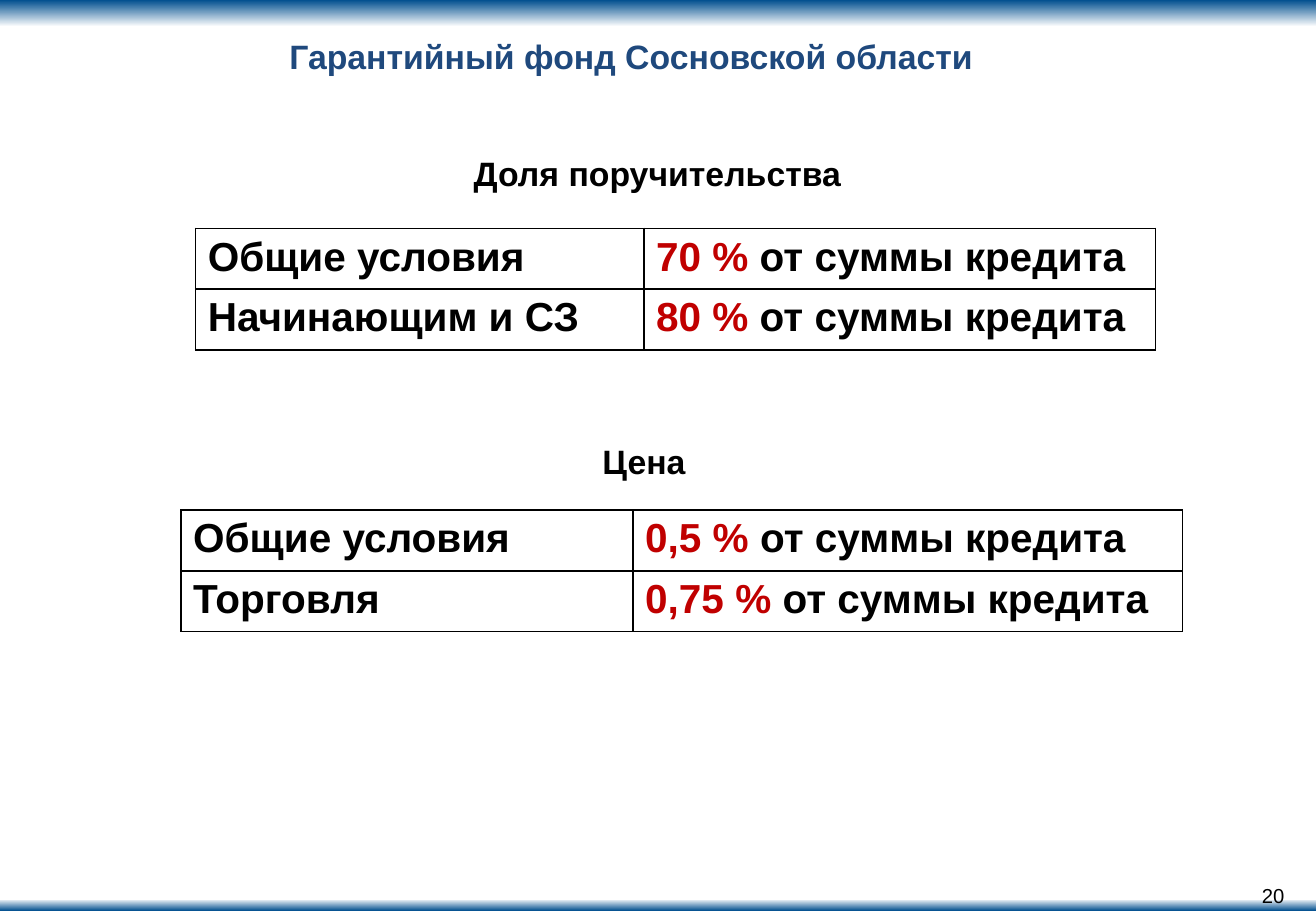
from dataclasses import dataclass

from lxml import etree
from pptx import Presentation
from pptx.dml.color import RGBColor
from pptx.enum.shapes import MSO_SHAPE
from pptx.enum.text import MSO_ANCHOR, PP_ALIGN
from pptx.oxml.ns import qn
from pptx.util import Inches, Pt

RECTANGLE = MSO_SHAPE.RECTANGLE
TOP, MIDDLE = MSO_ANCHOR.TOP, MSO_ANCHOR.MIDDLE
LEFT, CENTER, RIGHT = PP_ALIGN.LEFT, PP_ALIGN.CENTER, PP_ALIGN.RIGHT

BLACK = RGBColor(0x00, 0x00, 0x00)
WHITE = RGBColor(0xFF, 0xFF, 0xFF)
BAND_BLUE = RGBColor(0x00, 0x4E, 0x8E)
TITLE_BLUE = RGBColor(0x1F, 0x49, 0x7D)
RATE_RED = RGBColor(0xC0, 0x00, 0x00)

FONT = "Arial"
PAGE_WIDTH, PAGE_HEIGHT = 10.83, 7.5
ROW_HEIGHT = 0.5
RATE_BASE = " от суммы кредита"


@dataclass
class Band:
    top: float
    height: float
    angle: int


@dataclass
class Label:
    text: str
    left: float
    top: float
    width: float
    height: float
    size: int = 20
    bold: bool = True
    align: PP_ALIGN = LEFT
    inset_x: float = 0.1
    inset_y: float = 0.05


@dataclass
class RateTable:
    left: float
    top: float
    columns: tuple[float, float]
    rates: dict[str, str]


BANDS = [Band(0, 0.22, 270), Band(7.4, 0.1, 90)]

LABELS = [
    Label("20", 8.31, 7.27, 2.26, 0.2, size=12, bold=False, align=RIGHT,
          inset_x=0, inset_y=0),
    Label("Доля поручительства", 3.8, 1.21, 3.63, 0.44),
    Label("Цена", 4.86, 3.58, 1.1, 0.44),
]

TABLES = [
    RateTable(1.61, 1.88, (3.69, 4.21),
              {"Общие условия": "70 %", "Начинающим и СЗ": "80 %"}),
    RateTable(1.49, 4.2, (3.72, 4.52),
              {"Общие условия": "0,5 %", "Торговля": "0,75 %"}),
]


def style_paragraph(para, size: int, bold: bool, color: RGBColor, align=LEFT) -> None:
    para.alignment = align
    para.font.name = FONT
    para.font.size = Pt(size)
    para.font.bold = bold
    para.font.color.rgb = color


def set_frame(frame, inset_x: float, inset_y: float, anchor) -> None:
    frame.word_wrap = True
    frame.vertical_anchor = anchor
    frame.margin_left = frame.margin_right = Inches(inset_x)
    frame.margin_top = frame.margin_bottom = Inches(inset_y)


def add_band(page, band: Band) -> None:
    shape = page.shapes.add_shape(RECTANGLE, 0, Inches(band.top),
                                  Inches(PAGE_WIDTH), Inches(band.height))
    shape.shadow.inherit = False
    shape.line.fill.background()
    shape.fill.gradient()
    shape.fill.gradient_angle = band.angle
    for stop, color in zip(shape.fill.gradient_stops, (BAND_BLUE, WHITE)):
        stop.color.rgb = color


def fill_title(page, text: str) -> None:
    title = page.shapes.title
    title.left, title.top = Inches(0.14), Inches(0.29)
    title.width, title.height = Inches(10.11), Inches(0.34)
    set_frame(title.text_frame, 0, 0, MIDDLE)
    para = title.text_frame.paragraphs[0]
    para.text = text
    style_paragraph(para, 20, True, TITLE_BLUE, CENTER)


def add_label(page, label: Label) -> None:
    box = page.shapes.add_textbox(Inches(label.left), Inches(label.top),
                                  Inches(label.width), Inches(label.height))
    set_frame(box.text_frame, label.inset_x, label.inset_y, TOP)
    para = box.text_frame.paragraphs[0]
    para.text = label.text
    style_paragraph(para, label.size, label.bold, BLACK, label.align)


def format_cell(cell) -> None:
    """Clear the fill and draw a thin black border on every side."""
    cell.fill.background()
    properties = cell._tc.get_or_add_tcPr()
    for position, side in enumerate(("a:lnL", "a:lnR", "a:lnT", "a:lnB")):
        line = etree.Element(qn(side), w=str(Pt(1)))
        solid = etree.SubElement(line, qn("a:solidFill"))
        etree.SubElement(solid, qn("a:srgbClr"), val=str(BLACK))
        properties.insert(position, line)


def add_rate_table(page, spec: RateTable) -> None:
    row_count = len(spec.rates)
    table = page.shapes.add_table(
        row_count, 2, Inches(spec.left), Inches(spec.top),
        Inches(sum(spec.columns)), Inches(ROW_HEIGHT * row_count)).table
    table.first_row = table.horz_banding = False
    for column, width in zip(table.columns, spec.columns):
        column.width = Inches(width)
    for row, (condition, rate) in zip(table.rows, spec.rates.items()):
        row.height = Inches(ROW_HEIGHT)
        contents = ([(condition, BLACK)], [(rate, RATE_RED), (RATE_BASE, BLACK)])
        for cell, spans in zip(row.cells, contents):
            format_cell(cell)
            para = cell.text_frame.paragraphs[0]
            style_paragraph(para, 24, True, BLACK)
            for text, color in spans:
                span = para.add_run()
                span.text = text
                span.font.color.rgb = color


def main() -> None:
    deck = Presentation()
    deck.slide_width, deck.slide_height = Inches(PAGE_WIDTH), Inches(PAGE_HEIGHT)
    title_only = deck.slide_layouts[5]
    page = deck.slides.add_slide(title_only)

    # Header and footer bands
    for band in BANDS:
        add_band(page, band)

    # Title, section headings and page number
    fill_title(page, "Гарантийный фонд Сосновской области")
    for label in LABELS:
        add_label(page, label)

    # Guarantee share and price
    for spec in TABLES:
        add_rate_table(page, spec)

    deck.save("out.pptx")


if __name__ == "__main__":
    main()
